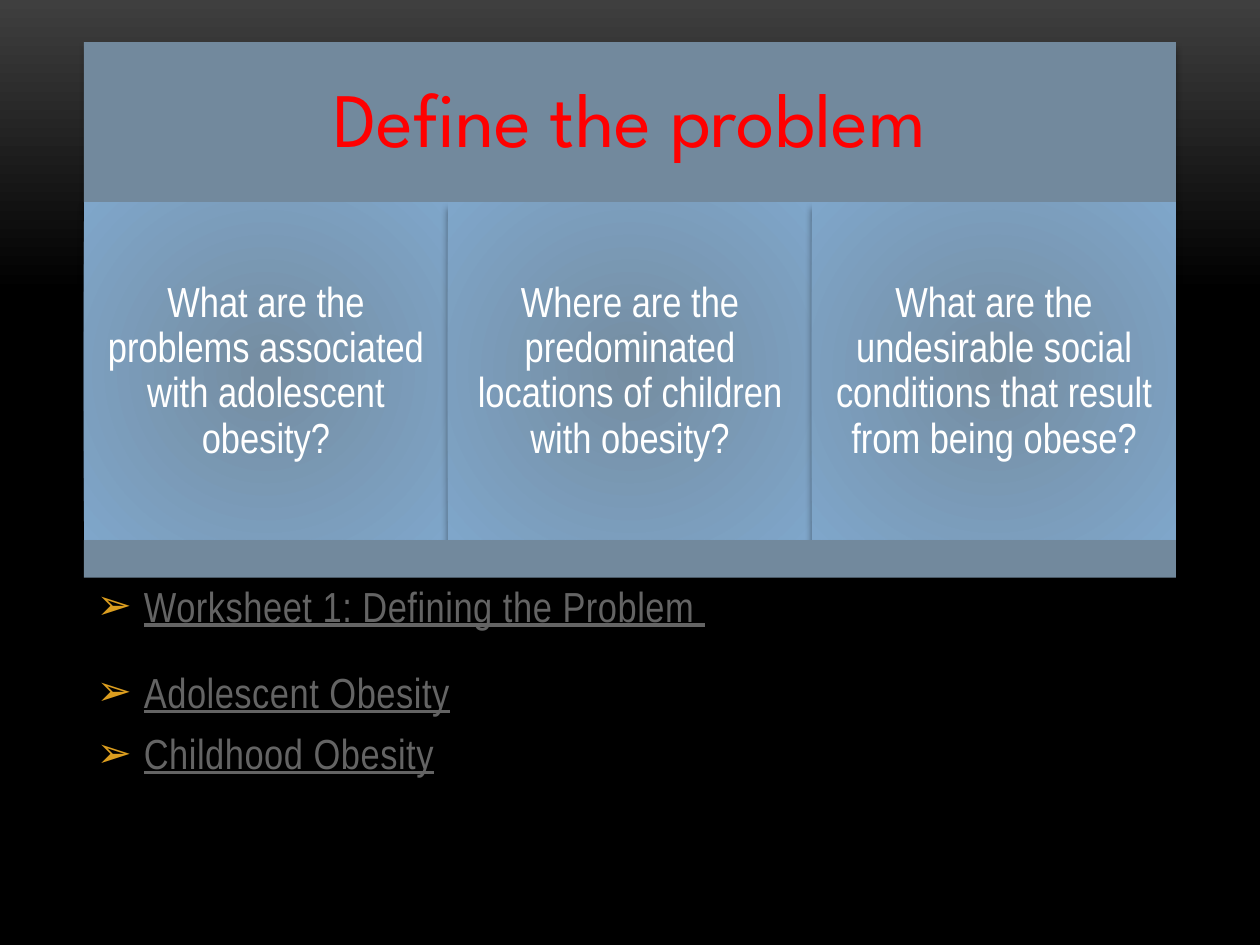
import pptx
import pptx.dml.color
import pptx.enum.shapes
import pptx.enum.text
import pptx.oxml
import pptx.oxml.ns
import pptx.util

Pt = pptx.util.Pt
MIDDLE = pptx.enum.text.MSO_ANCHOR.MIDDLE
CENTER = pptx.enum.text.PP_ALIGN.CENTER
NAMESPACE = pptx.oxml.ns.nsdecls("a")

SLATE = "72899D"
BODY_FONT = "Arial Narrow"
QUESTIONS = [
    "What are the problems associated with adolescent obesity?",
    "Where are the predominated locations of children with obesity?",
    "What are the undesirable social conditions that result from being obese?",
]
WORKSHEETS = [
    ("Worksheet 1: Defining the Problem ", 0),
    ("Adolescent Obesity", 20.3),
    ("Childhood Obesity", 6),
]


def color(value):
    return pptx.dml.color.RGBColor.from_string(value)


def set_gradient(fill, stops):
    fill.gradient()
    for stop, (position, value) in zip(fill.gradient_stops, stops):
        stop.position = position
        stop.color.rgb = color(value)


def add_shadow(shape):
    shape.shadow.inherit = False
    effects = shape._element.spPr.find(pptx.oxml.ns.qn("a:effectLst"))
    effects.append(pptx.oxml.parse_xml(
        f'<a:outerShdw {NAMESPACE} blurRad="{Pt(4)}" dist="{Pt(3.4)}" dir="5400000" '
        'rotWithShape="0"><a:srgbClr val="000000"><a:alpha val="40000"/></a:srgbClr>'
        '</a:outerShdw>'))


def place(shape, box):
    shape.left, shape.top, shape.width, shape.height = (Pt(length) for length in box)


def set_margins(frame, left, top, right, bottom):
    frame.margin_left, frame.margin_top = Pt(left), Pt(top)
    frame.margin_right, frame.margin_bottom = Pt(right), Pt(bottom)
    frame.word_wrap = True
    frame.auto_size = pptx.enum.text.MSO_AUTO_SIZE.NONE


def add_span(para, text, size, name, value):
    span = para.add_run()
    span.text = text
    span.font.size = Pt(size)
    span.font.name = name
    span.font.color.rgb = color(value)
    return span


def write_centered(shape, margin, text, size, name, value):
    frame = shape.text_frame
    set_margins(frame, margin, margin, margin, margin)
    frame.vertical_anchor = MIDDLE
    para = frame.paragraphs[0]
    para.alignment = CENTER
    para.line_spacing = 0.9
    add_span(para, text, size, name, value)


def add_rectangle(page, box):
    shape = page.shapes.add_shape(
        pptx.enum.shapes.MSO_SHAPE.RECTANGLE, *(Pt(length) for length in box))
    shape.line.fill.background()
    add_shadow(shape)
    return shape


def build_title(page, box):
    title = page.shapes.title
    place(title, box)
    title.fill.solid()
    title.fill.fore_color.rgb = color(SLATE)
    add_shadow(title)
    write_centered(title, 13, "Define the problem", 44, "League Spartan", "FF0000")


def build_questions(page, box):
    left, top, width, height = box
    panel_width = width / len(QUESTIONS)
    for index, question in enumerate(QUESTIONS):
        panel = add_rectangle(page, (left + index * panel_width, top, panel_width, height))
        set_gradient(panel.fill, [(0, "758DA1"), (1, "7FA6CA")])
        linear = panel._element.spPr.find(".//" + pptx.oxml.ns.qn("a:lin"))
        linear.getparent().replace(linear, pptx.oxml.parse_xml(
            f'<a:path {NAMESPACE} path="circle">'
            '<a:fillToRect l="50000" t="50000" r="50000" b="50000"/></a:path>'))
        write_centered(panel, 7.2, question, 24, BODY_FONT, "FFFFFF")


def build_footer(page, box):
    footer = add_rectangle(page, box)
    footer.fill.solid()
    footer.fill.fore_color.rgb = color(SLATE)


def build_worksheets(page, box):
    body = page.placeholders[1]
    place(body, box)
    frame = body.text_frame
    set_margins(frame, 7.2, 7, 7.2, 3.6)
    frame.vertical_anchor = pptx.enum.text.MSO_ANCHOR.TOP
    for index, (text, space) in enumerate(WORKSHEETS):
        para = frame.add_paragraph() if index else frame.paragraphs[0]
        properties = para._p.get_or_add_pPr()
        properties.set("marL", str(Pt(27)))
        properties.set("indent", str(-Pt(27)))
        for bullet in ('<a:buClr {}><a:srgbClr val="DC9E1F"/></a:buClr>',
                       '<a:buFont {} typeface="Arial"/>',
                       '<a:buChar {} char="➢"/>'):
            properties.append(pptx.oxml.parse_xml(bullet.format(NAMESPACE)))
        para.line_spacing = 0.8
        para.space_before = Pt(space)
        para.space_after = Pt(6)
        span = add_span(para, text, 24, BODY_FONT, "646464")
        span.font.underline = True
        span._r.get_or_add_rPr().set("spc", "30")


def main():
    deck = pptx.Presentation()
    deck.slide_width, deck.slide_height = Pt(720), Pt(540)
    page = deck.slides.add_slide(deck.slide_layouts[1])
    backdrop = page.background.fill
    set_gradient(backdrop, [(0, "3F3F3F"), (0.31, "000000")])
    backdrop.gradient_angle = 270

    left, width = 48, 624
    build_title(page, (left, 24, width, 91.7))
    build_questions(page, (left, 115.7, width, 193))
    build_footer(page, (left, 308.7, width, 21.4))
    build_worksheets(page, (left, 330, width, 150))
    deck.save("out.pptx")


if __name__ == "__main__":
    main()
